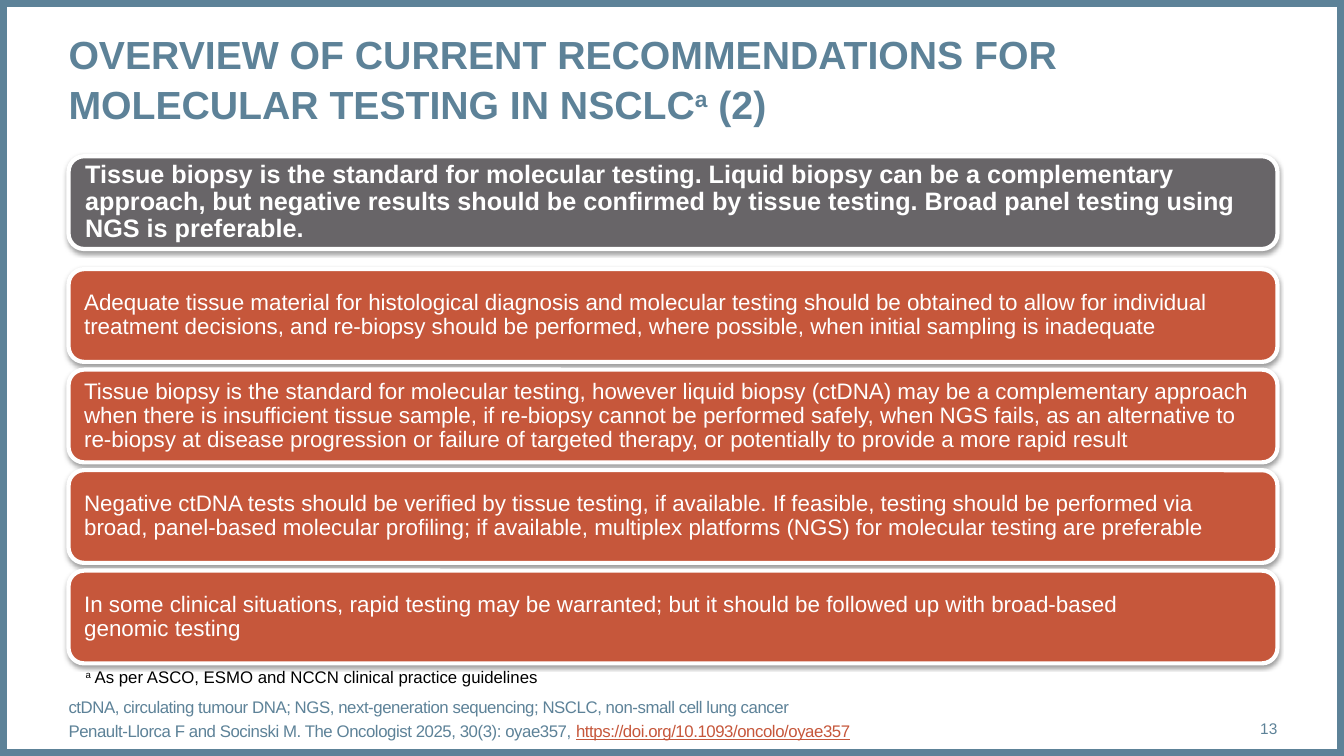
from lxml import etree
from pptx import Presentation
from pptx.dml.color import RGBColor
from pptx.enum import shapes, text
from pptx.oxml import ns
from pptx.util import Inches, Pt

STEEL = RGBColor(0x5D, 0x82, 0x98)
GREY = RGBColor(0x68, 0x65, 0x68)
RUST = RGBColor(0xC6, 0x57, 0x3B)
WHITE = RGBColor(0xFF, 0xFF, 0xFF)
BLACK = RGBColor(0, 0, 0)

LEFT, WIDTH = 0.68, 11.99
BAR_HEIGHT, FIRST_BAR, BAR_STEP = 0.92, 2.67, 0.997

HEADLINE = (
    "Tissue biopsy is the standard for molecular testing. Liquid biopsy can be a "
    "complementary approach, but negative results should be confirmed by tissue testing. "
    "Broad panel testing using NGS is preferable."
)
RECOMMENDATIONS = [
    "Adequate tissue material for histological diagnosis and molecular testing should be "
    "obtained to allow for individual treatment decisions, and re-biopsy should be performed, "
    "where possible, when initial sampling is inadequate",
    "Tissue biopsy is the standard for molecular testing, however liquid biopsy (ctDNA) may be "
    "a complementary approach when there is insufficient tissue sample, if re-biopsy cannot be "
    "performed safely, when NGS fails, as an alternative to re-biopsy at disease progression or "
    "failure of targeted therapy, or potentially to provide a more rapid result",
    "Negative ctDNA tests should be verified by tissue testing, if available. If feasible, "
    "testing should be performed via broad, panel-based molecular profiling; if available, "
    "multiplex platforms (NGS) for molecular testing are preferable",
    "In some clinical situations, rapid testing may be warranted; but it should be followed up "
    "with broad-based \vgenomic testing",
]


def format_object(target, values):
    """Set each named attribute of an object."""
    for name, value in values.items():
        setattr(target, name, value)


def style_spans(para, size, color, bold=False):
    """Give every span of a paragraph the same font."""
    for span in para.runs:
        format_object(span.font, {"name": "Arial", "size": Pt(size), "bold": bold})
        span.font.color.rgb = color


def set_frame(box, inset, anchor, wrap=True):
    """Set insets, anchor and wrapping of a text frame and return it."""
    frame = box.text_frame
    sides = ("margin_left", "margin_top", "margin_right", "margin_bottom")
    format_object(frame, dict.fromkeys(sides, Inches(inset)))
    format_object(frame, {"vertical_anchor": anchor, "word_wrap": wrap})
    return frame


def add_text(page, place, paragraphs, size, color, bold=False,
             anchor=text.MSO_ANCHOR.TOP, inset=0, wrap=True):
    """Add a text box from lists of spans and return its paragraphs."""
    box = page.shapes.add_textbox(*map(Inches, place))
    frame = set_frame(box, inset, anchor, wrap)
    for index, spans in enumerate(paragraphs):
        para = frame.paragraphs[0] if index == 0 else frame.add_paragraph()
        for words in spans:
            para.add_run().text = words
        style_spans(para, size, color, bold)
    return frame.paragraphs


def raise_span(span):
    """Turn a span into superscript."""
    span.font._element.set("baseline", "30000")


def add_shadow(shape):
    """Cast a soft shadow straight down from a shape."""
    effects = etree.SubElement(shape._element.spPr, ns.qn("a:effectLst"))
    shadow = etree.SubElement(effects, ns.qn("a:outerShdw"), {
        "blurRad": str(Pt(3.1)), "dist": str(Pt(1.6)), "dir": "5400000", "rotWithShape": "0"})
    color = etree.SubElement(shadow, ns.qn("a:srgbClr"), val="000000")
    etree.SubElement(color, ns.qn("a:alpha"), val="38000")


def add_bar(page, top, words, fill, size, inset, bold=False):
    """Add a rounded bar with a white edge and left-aligned text."""
    bar = page.shapes.add_shape(
        shapes.MSO_SHAPE.ROUNDED_RECTANGLE, *map(Inches, (LEFT, top, WIDTH, BAR_HEIGHT)))
    bar.fill.solid()
    bar.fill.fore_color.rgb = fill
    bar.line.color.rgb = WHITE
    bar.line.width = Pt(3)
    add_shadow(bar)
    para = set_frame(bar, inset, text.MSO_ANCHOR.MIDDLE).paragraphs[0]
    para.text = words
    format_object(para, {"alignment": text.PP_ALIGN.LEFT, "line_spacing": 0.9})
    style_spans(para, size, WHITE, bold)


def add_border(page, width, height):
    """Draw the border around the slide."""
    border = page.shapes.add_shape(shapes.MSO_SHAPE.RECTANGLE, 0, 0, width, height)
    border.shadow.inherit = False
    border.fill.background()
    border.line.color.rgb = STEEL
    border.line.width = Pt(10)


def add_footer(page):
    """Add the abbreviations, the reference and the slide number."""
    paragraphs = add_text(page, (LEFT, 6.95, 11.13, 0.4), [
        ["ctDNA, circulating tumour DNA; NGS, next-generation sequencing; "
         "NSCLC, non-small cell lung cancer"],
        ["Penault-Llorca F and Socinski M. The Oncologist 2025, 30(3): oyae357,\u00a0",
         "https://doi.org/10.1093/oncolo/oyae357"],
    ], 12, STEEL, anchor=text.MSO_ANCHOR.BOTTOM)
    for para in paragraphs:
        for span in para.runs:
            span.font._element.set("spc", "-30")
    paragraphs[1].space_before = Pt(3)
    address = paragraphs[1].runs[1]
    address.font.underline = True
    address.font.color.rgb = RUST
    number = add_text(page, (11.81, 7.03, 0.86, 0.4), [["13"]], 11, STEEL,
                      anchor=text.MSO_ANCHOR.MIDDLE)
    number[0].alignment = text.PP_ALIGN.RIGHT


def main():
    """Build the slide and save it."""
    deck = Presentation()
    format_object(deck, {"slide_width": Inches(13.33), "slide_height": Inches(7.5)})
    page = deck.slides.add_slide(deck.slide_layouts[6])
    add_border(page, deck.slide_width, deck.slide_height)
    title = add_text(page, (LEFT, 0.28, WIDTH, 0.94), [
        ["OVERVIEW OF CURRENT RECOMMENDATIONS FOR MOLECULAR TESTING IN NSCLC", "a", " (2)"],
    ], 28, STEEL, bold=True)
    title[0].line_spacing = 1.05
    raise_span(title[0].runs[1])
    add_footer(page)
    add_bar(page, 1.55, HEADLINE, GREY, 18, 0.12, bold=True)
    for index, words in enumerate(RECOMMENDATIONS):
        add_bar(page, FIRST_BAR + index * BAR_STEP, words, RUST, 16, 0.11)
    footnote = add_text(page, (0.75, 6.57, 4.73, 0.3), [
        ["a", " As per ASCO, ESMO and NCCN clinical practice guidelines"],
    ], 12, BLACK, inset=0.1, wrap=False)
    format_object(page.shapes[-1].text_frame,
                  {"margin_top": Inches(0.05), "margin_bottom": Inches(0.05)})
    raise_span(footnote[0].runs[0])
    deck.save("out.pptx")


if __name__ == "__main__":
    main()
